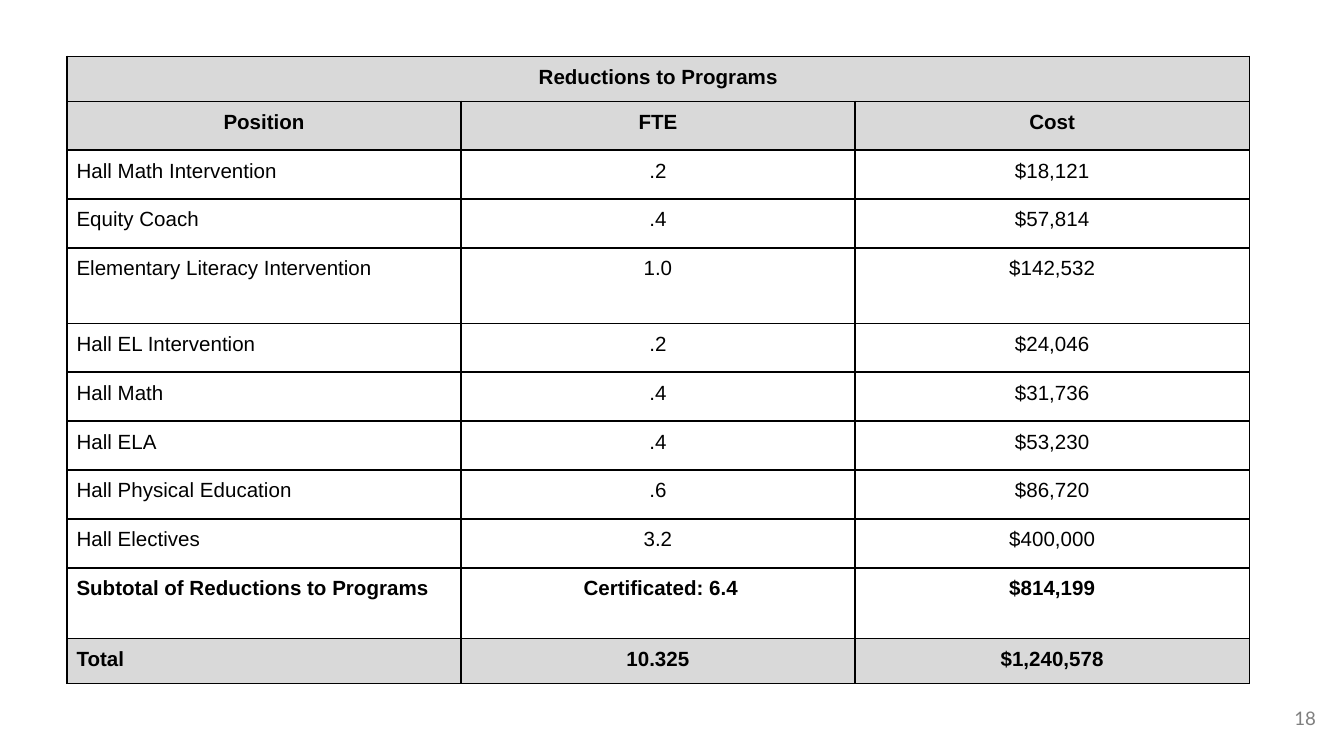
from typing import NamedTuple

from lxml.etree import SubElement
from pptx import Presentation
from pptx.dml.color import RGBColor
from pptx.enum.text import MSO_ANCHOR, PP_ALIGN
from pptx.oxml.ns import qn
from pptx.util import Pt

GREY = "D9D9D9"
BLACK = "000000"
COLUMN_WIDTHS = (211, 211, 211.4)
TITLE_HEIGHT = 24.1
ROW_HEIGHT = 26.2


class Row(NamedTuple):
    position: str
    fte: str = ""
    cost: str = ""
    height: float = ROW_HEIGHT
    bold: bool = False
    shaded: bool = False
    heading: bool = False

    @property
    def texts(self) -> tuple[str, str, str]:
        return self.position, self.fte, self.cost


ROWS = [
    Row("Reductions to Programs", height=TITLE_HEIGHT, bold=True, shaded=True, heading=True),
    Row("Position", "FTE", "Cost", bold=True, shaded=True, heading=True),
    Row("Hall Math Intervention", ".2", "$18,121"),
    Row("Equity Coach", ".4", "$57,814"),
    Row("Elementary Literacy Intervention", "1.0", "$142,532", height=40.4),
    Row("Hall EL Intervention", ".2", "$24,046"),
    Row("Hall Math", ".4", "$31,736"),
    Row("Hall ELA", ".4", "$53,230"),
    Row("Hall Physical Education", ".6", "$86,720"),
    Row("Hall Electives", "3.2", "$400,000"),
    Row("Subtotal of Reductions to Programs", " Certificated: 6.4", "$814,199", height=37.8, bold=True),
    Row("Total", "10.325", "$1,240,578", height=TITLE_HEIGHT, bold=True, shaded=True),
]


def color(value: str) -> RGBColor:
    return RGBColor.from_string(value)


def write(tf, text: str, align, font: str, size: float, ink: str, bold: bool = False) -> None:
    tf.text = text
    p = tf.paragraphs[0]
    p.alignment = align
    for r in p.runs:
        r.font.name = font
        r.font.size = Pt(size)
        r.font.bold = bold
        r.font.color.rgb = color(ink)


def set_insets(box, inset: float) -> None:
    box.margin_left = box.margin_right = Pt(inset)
    box.margin_top = box.margin_bottom = Pt(inset)


def add_borders(cell, ink: str, width: float) -> None:
    tc_pr = cell._tc.get_or_add_tcPr()
    for side in ("L", "R", "T", "B"):
        ln = SubElement(tc_pr, qn(f"a:ln{side}"), w=str(Pt(width)))
        fill = SubElement(ln, qn("a:solidFill"))
        SubElement(fill, qn("a:srgbClr"), val=ink)


def fill_cell(cell, text: str, row: Row, align) -> None:
    set_insets(cell, 5)
    cell.vertical_anchor = MSO_ANCHOR.TOP
    add_borders(cell, BLACK, 1)
    if row.shaded:
        cell.fill.solid()
        cell.fill.fore_color.rgb = color(GREY)
    else:
        cell.fill.background()
    write(cell.text_frame, text, align, "Arial", 11, BLACK, row.bold)


def add_reductions_table(s) -> None:
    height = sum(row.height for row in ROWS)
    frame = s.shapes.add_table(
        len(ROWS), len(COLUMN_WIDTHS), Pt(36), Pt(30.2), Pt(sum(COLUMN_WIDTHS)), Pt(height)
    )
    table = frame.table
    table.first_row = False
    table.horz_banding = False
    for column, width in zip(table.columns, COLUMN_WIDTHS):
        column.width = Pt(width)
    for i, row in enumerate(ROWS):
        table.rows[i].height = Pt(row.height)
        for j, text in enumerate(row.texts):
            centred = row.heading or j > 0
            align = PP_ALIGN.CENTER if centred else PP_ALIGN.LEFT
            fill_cell(table.cell(i, j), text, row, align)
    table.cell(0, 0).merge(table.cell(0, len(COLUMN_WIDTHS) - 1))


def add_page_number(s, number: str) -> None:
    sp = s.shapes.add_textbox(Pt(668.9), Pt(369.4), Pt(43.2), Pt(31))
    tf = sp.text_frame
    tf.word_wrap = True
    tf.vertical_anchor = MSO_ANCHOR.MIDDLE
    set_insets(tf, 7.2)
    write(tf, number, PP_ALIGN.RIGHT, "Lato", 10, "7F7F7F")


def main() -> None:
    prs = Presentation()
    prs.slide_width, prs.slide_height = Pt(720), Pt(405)
    s = prs.slides.add_slide(prs.slide_layouts[6])
    add_page_number(s, "18")
    add_reductions_table(s)
    prs.save("out.pptx")


if __name__ == "__main__":
    main()
